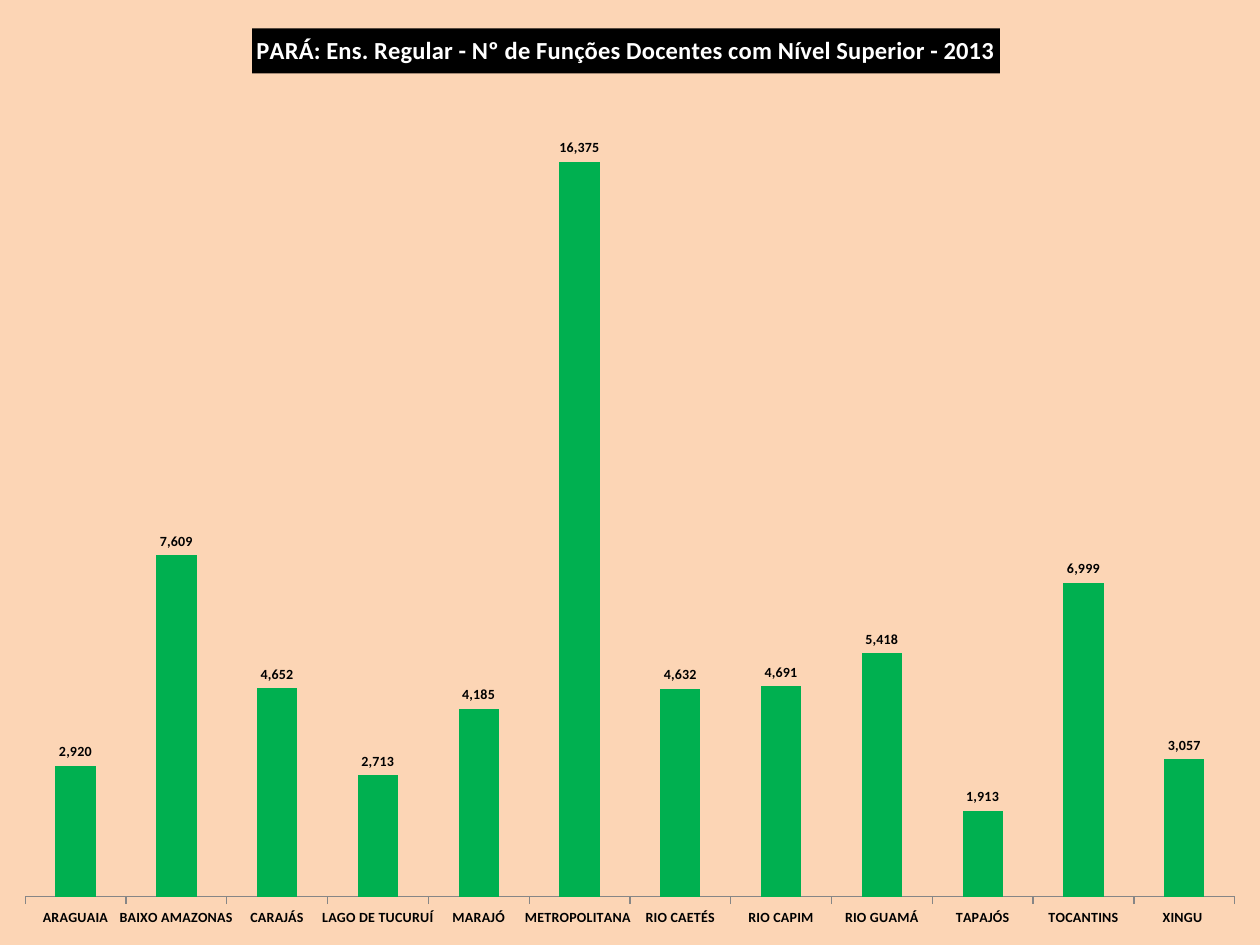
from lxml.etree import SubElement
from pptx import Presentation
from pptx.chart.data import CategoryChartData
from pptx.dml.color import RGBColor
from pptx.enum.chart import XL_CHART_TYPE, XL_LABEL_POSITION, XL_TICK_LABEL_POSITION, XL_TICK_MARK
from pptx.oxml import parse_xml
from pptx.oxml.ns import nsdecls, qn
from pptx.util import Cm, Pt

TITLE = "PARÁ: Ens. Regular - Nº de Funções Docentes com Nível Superior - 2013"
TEACHERS_BY_REGION = {
    "ARAGUAIA": 2920,
    "BAIXO AMAZONAS": 7609,
    "CARAJÁS": 4652,
    "LAGO DE TUCURUÍ": 2713,
    "MARAJÓ": 4185,
    "METROPOLITANA ": 16375,
    "RIO CAETÉS": 4632,
    "RIO CAPIM": 4691,
    "RIO GUAMÁ": 5418,
    "TAPAJÓS": 1913,
    "TOCANTINS": 6999,
    "XINGU ": 3057,
}
NUMBER_FORMAT = '_(* #,##0_);_(* \\(#,##0\\);_(* "-"_);_(@_)'
PEACH = "FCD5B5"
GREEN = "00B050"
BLACK = "000000"
WHITE = "FFFFFF"
GRAY = "868686"


def color(hex_string):
    """Return the colour for a hex string."""
    return RGBColor.from_string(hex_string)


def style_font(font, size, hex_string, bold=True):
    """Set the typeface, size, colour and weight of a font."""
    font.name = "Calibri"
    font.size = Pt(size)
    font.bold = bold
    font.color.rgb = color(hex_string)


def paint(fill, hex_string):
    """Make a fill solid."""
    fill.solid()
    fill.fore_color.rgb = color(hex_string)


def area_properties(hex_string):
    """Return chart area properties with a solid fill and no outline."""
    return parse_xml(
        f'<c:spPr {nsdecls("c", "a")}><a:solidFill><a:srgbClr val="{hex_string}"/>'
        "</a:solidFill><a:ln><a:noFill/></a:ln></c:spPr>"
    )


def set_layout(element, position, **values):
    """Give a chart part a manual layout at the given child position."""
    for old_layout in element.findall(qn("c:layout")):
        element.remove(old_layout)
    layout = parse_xml(f'<c:layout {nsdecls("c")}><c:manualLayout/></c:layout>')
    for name, value in values.items():
        SubElement(layout[0], qn(f"c:{name}")).set("val", str(value))
    element.insert(position, layout)


def format_title(chart):
    """Write the chart title in white on a black band."""
    title = chart.chart_title
    run = title.text_frame.paragraphs[0].add_run()
    run.text = TITLE
    style_font(run.font, 14, WHITE)
    paint(title.format.fill, BLACK)
    set_layout(chart._chartSpace.chart.find(qn("c:title")), 1,
               xMode="edge", yMode="edge", x=0.2, y=0.03)


def format_axes(chart):
    """Show the region axis and hide the value axis."""
    regions = chart.category_axis
    regions.has_major_gridlines = False
    regions.major_tick_mark = XL_TICK_MARK.OUTSIDE
    regions.tick_label_position = XL_TICK_LABEL_POSITION.NEXT_TO_AXIS
    regions.format.line.color.rgb = color(GRAY)
    regions.format.line.width = Pt(0.75)
    style_font(regions.tick_labels.font, 8, BLACK)
    values = chart.value_axis
    values.visible = False
    values.has_major_gridlines = False
    values.minimum_scale = 0
    values.maximum_scale = 18000
    values.tick_labels.number_format = NUMBER_FORMAT
    values.tick_labels.number_format_is_linked = False


def format_columns(plot):
    """Colour the columns and label each with its value."""
    plot.gap_width = 150
    plot.vary_by_categories = False
    paint(plot.series[0].format.fill, GREEN)
    labels = plot.series[0].data_labels
    labels.show_value = True
    labels.position = XL_LABEL_POSITION.OUTSIDE_END
    labels.number_format = NUMBER_FORMAT
    labels.number_format_is_linked = False
    style_font(labels.font, 8, BLACK)


def add_teacher_chart(slide, left, top, width, height):
    """Place the column chart of teaching posts in the given box."""
    data = CategoryChartData(number_format=NUMBER_FORMAT)
    data.categories = list(TEACHERS_BY_REGION)
    data.add_series("Series 1", list(TEACHERS_BY_REGION.values()))
    chart = slide.shapes.add_chart(
        XL_CHART_TYPE.COLUMN_CLUSTERED, left, top, width, height, data
    ).chart
    chart.has_legend = False
    style_font(chart.font, 10, BLACK, bold=False)
    format_title(chart)
    format_axes(chart)
    format_columns(chart.plots[0])
    chart_element = chart._chartSpace.chart
    chart_element.addnext(area_properties(PEACH))
    plot_area = chart_element.plotArea
    plot_area.append(area_properties(PEACH))
    set_layout(plot_area, 0, layoutTarget="inner", xMode="edge", yMode="edge",
               x=0.02, y=0.094, w=0.96, h=0.855)


def main():
    """Build and save the presentation."""
    presentation = Presentation()
    presentation.slide_width = Cm(25.4)
    presentation.slide_height = Cm(19.05)
    slide = presentation.slides.add_slide(presentation.slide_layouts[6])
    add_teacher_chart(slide, 0, 0, presentation.slide_width, presentation.slide_height)
    presentation.save("out.pptx")


if __name__ == "__main__":
    main()
